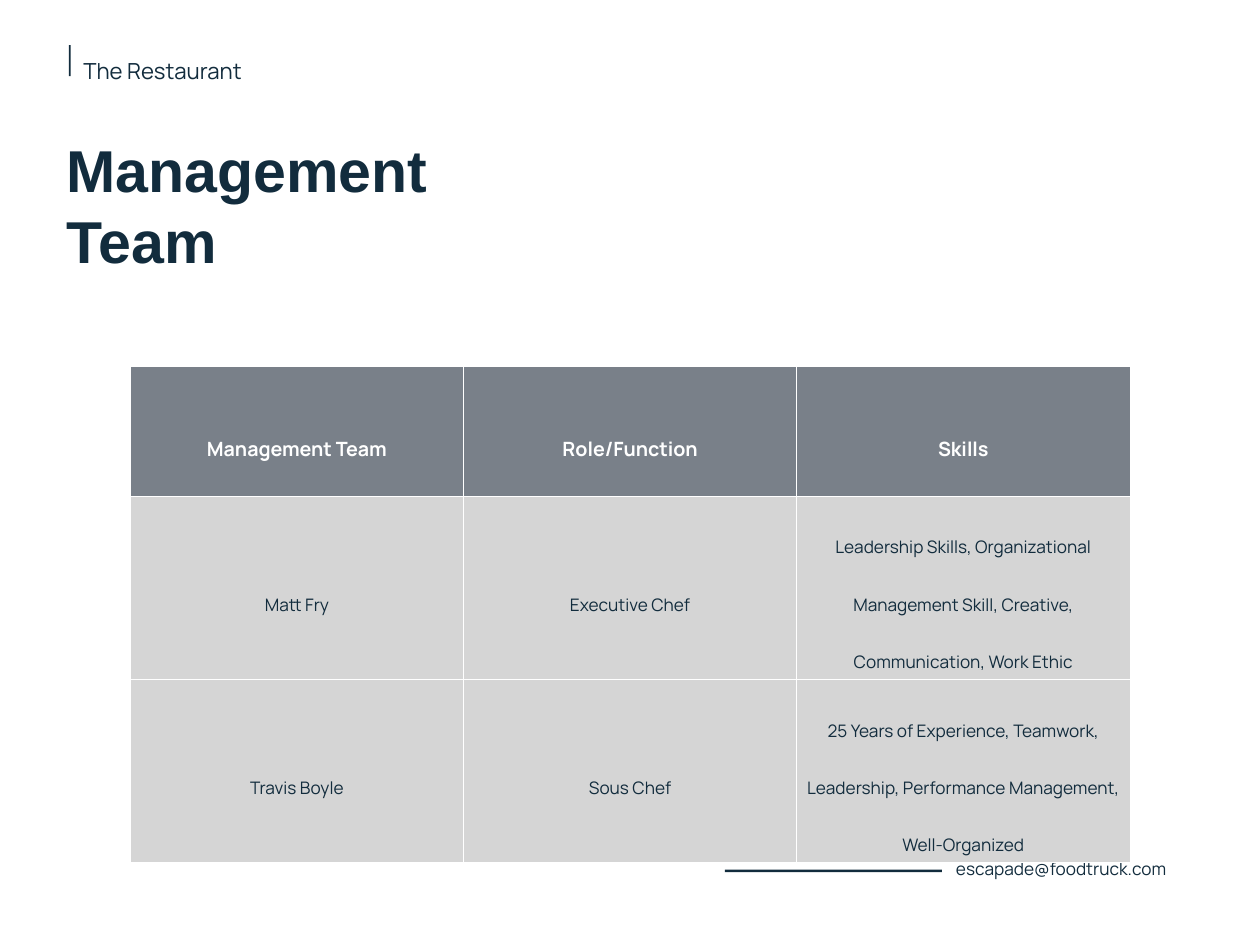
from lxml.etree import SubElement
from pptx import Presentation
from pptx.dml.color import RGBColor
from pptx.enum.shapes import MSO_SHAPE
from pptx.enum.text import MSO_ANCHOR, MSO_AUTO_SIZE, PP_ALIGN
from pptx.oxml.ns import qn
from pptx.util import Pt

# Content
SECTION = ["The Restaurant"]
HEADING = ["Management", "Team"]
EMAIL = ["escapade@foodtruck.com"]
TEAM = [
    ("Management Team", "Role/Function", "Skills"),
    ("Matt Fry", "Executive Chef",
     "Leadership Skills, Organizational Management Skill, Creative, "
     "Communication, Work Ethic"),
    ("Travis Boyle", "Sous Chef",
     "25 Years of Experience, Teamwork, Leadership, "
     "Performance Management, Well-Organized"),
]

# Theme: colours, type and table measures
NAVY, WHITE = RGBColor.from_string("122C3D"), RGBColor.from_string("FFFFFF")
THEME = {
    "section": {"name": "Manrope", "size": Pt(18), "bold": False, "color": NAVY},
    "heading": {"name": "Arial", "size": Pt(48), "bold": True, "color": NAVY},
    "email": {"name": "Manrope", "size": Pt(14), "bold": False, "color": NAVY},
    "header": {"name": "Manrope", "size": Pt(16), "bold": True, "color": WHITE},
    "cell": {"name": "Manrope", "size": Pt(14), "bold": False, "color": NAVY},
    "header_fill": RGBColor.from_string("798089"),
    "cell_fill": RGBColor.from_string("D5D5D5"),
    "border": WHITE,
    "border_width": Pt(0.75),
}
TABLE_LEFT, TABLE_TOP = 105.9, 297.4
COLUMN_WIDTH, ROW_HEIGHT = 270.8, 105.9
TEXT_INSET, CELL_INSET = Pt(2.2), Pt(4.5)
SIDES = ("left", "top", "right", "bottom")


def set_all(target, values):
    for attribute, value in values.items():
        setattr(target, attribute, value)


def box(*lengths):
    return dict(zip(("left", "top", "width", "height"), map(Pt, lengths)))


def write_lines(text_frame, lines, style, alignment=PP_ALIGN.LEFT, line_spacing=1.0):
    for index, line in enumerate(lines):
        paragraph = text_frame.paragraphs[0] if index == 0 else text_frame.add_paragraph()
        set_all(paragraph, {"alignment": alignment, "line_spacing": line_spacing,
                            "space_before": Pt(0)})
        run = paragraph.add_run()
        run.text = line
        for attribute, value in THEME[style].items():
            if attribute == "color":
                run.font.color.rgb = value
            else:
                setattr(run.font, attribute, value)


def fill_text(shape, lines, style, anchor=MSO_ANCHOR.TOP, line_spacing=1.0):
    frame = shape.text_frame
    set_all(frame, {f"margin_{side}": TEXT_INSET for side in SIDES})
    set_all(frame, {"word_wrap": True, "auto_size": MSO_AUTO_SIZE.NONE,
                    "vertical_anchor": anchor})
    write_lines(frame, lines, style, line_spacing=line_spacing)


def add_text(slide, place, *text):
    fill_text(slide.shapes.add_textbox(**place), *text)


def add_bar(slide, place):
    bar = slide.shapes.add_shape(MSO_SHAPE.RECTANGLE, **place)
    bar.shadow.inherit = False
    bar.fill.solid()
    bar.fill.fore_color.rgb = NAVY
    bar.line.fill.background()


def add_borders(cell):
    properties = cell._tc.get_or_add_tcPr()
    for tag in ("a:lnL", "a:lnR", "a:lnT", "a:lnB"):
        line = SubElement(properties, qn(tag), w=str(THEME["border_width"]))
        fill = SubElement(line, qn("a:solidFill"))
        SubElement(fill, qn("a:srgbClr"), val=str(THEME["border"]))


def add_team_table(slide):
    row_count, column_count = len(TEAM), len(TEAM[0])
    place = box(TABLE_LEFT, TABLE_TOP, COLUMN_WIDTH * column_count, ROW_HEIGHT * row_count)
    table = slide.shapes.add_table(row_count, column_count, **place).table
    set_all(table, {"first_row": False, "horz_banding": False})
    for column in table.columns:
        column.width = Pt(COLUMN_WIDTH)
    for row_index, texts in enumerate(TEAM):
        table.rows[row_index].height = Pt(ROW_HEIGHT)
        style, line_spacing = ("header", 2.31) if row_index == 0 else ("cell", 2.43)
        for column_index, text in enumerate(texts):
            cell = table.cell(row_index, column_index)
            set_all(cell, {f"margin_{side}": CELL_INSET for side in SIDES})
            cell.vertical_anchor = MSO_ANCHOR.MIDDLE
            add_borders(cell)
            cell.fill.solid()
            cell.fill.fore_color.rgb = THEME[f"{style}_fill"]
            write_lines(cell.text_frame, [text], style, PP_ALIGN.CENTER, line_spacing)


def main():
    presentation = Presentation()
    set_all(presentation, {"slide_width": Pt(1024), "slide_height": Pt(768)})
    slide = presentation.slides.add_slide(presentation.slide_layouts[5])

    # Section title with its upright bar
    title = slide.shapes.title
    set_all(title, box(65.5, 34, 182, 31))
    fill_text(title, SECTION, "section", MSO_ANCHOR.TOP, 1.5)
    add_bar(slide, box(56, 36.7, 1.5, 25.2))

    # Footer e-mail with its rule
    add_text(slide, box(774.7, 695.5, 249, 31), EMAIL, "email")
    add_bar(slide, box(589, 706.8, 176.5, 2))

    # Heading and team table
    add_text(slide, box(52, 106.5, 506, 119), HEADING, "heading", MSO_ANCHOR.MIDDLE)
    add_team_table(slide)

    presentation.save("out.pptx")


if __name__ == "__main__":
    main()
